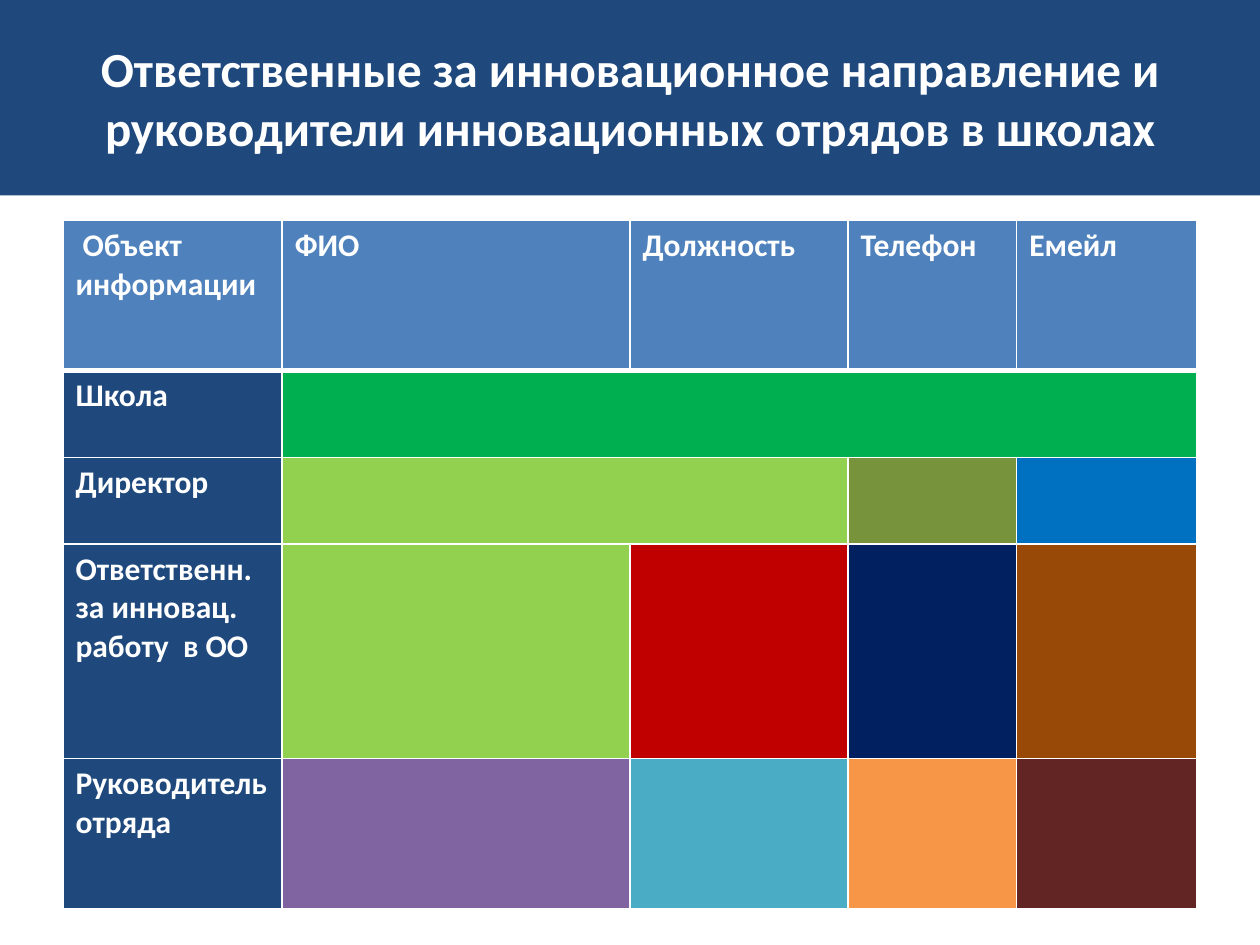
from pptx import Presentation
from pptx.dml.color import RGBColor
from pptx.enum.shapes import MSO_SHAPE as Shape
from pptx.enum.text import MSO_ANCHOR as Anchor, PP_ALIGN as Align
from pptx.oxml import parse_xml
from pptx.oxml.ns import nsdecls
from pptx.util import Inches, Pt

# Content
TITLE = ("Ответственные за инновационное направление и "
         "руководители инновационных отрядов в школах")
HEADERS = [" Объект информации", "ФИО", "Должность", "Телефон", "Емейл"]
# Row label, then cell fills; None continues the cell on its left
ROWS = [
    ("Школа", ["00B050", None, None, None]),
    ("Директор", ["92D050", None, "77933C", "0070C0"]),
    ("Ответственн.\nза инновац. работу  в ОО",
     ["92D050", "C00000", "002060", "984807"]),
    ("Руководитель отряда", ["8064A2", "4BACC6", "F79646", "632523"]),
]
COL_WIDTHS = [1.74, 2.76, 1.73, 1.34, 1.43]
ROW_HEIGHTS = [1.19, 0.69, 0.69, 1.7, 1.19]

THEME = dict(font="Calibri", title_size=28, cell_size=18, text="FFFFFF",
             dark="1F497D", header="4F81BD", border="FFFFFF")


def paint(fill, color):
    fill.solid()
    fill.fore_color.rgb = RGBColor.from_string(color)


def write(tf, text, size):
    tf.text = text
    for p in tf.paragraphs:
        for r in p.runs:
            r.font.name, r.font.size, r.font.bold = THEME["font"], Pt(size), True
            r.font.color.rgb = RGBColor.from_string(THEME["text"])


def set_borders(cell, top, bottom):
    tc_pr = cell._tc.get_or_add_tcPr()
    for side, width in zip("LRTB", (1, 1, top, bottom)):
        tc_pr.append(parse_xml(
            f'<a:ln{side} {nsdecls("a")} w="{Pt(width)}"><a:solidFill>'
            f'<a:srgbClr val="{THEME["border"]}"/></a:solidFill></a:ln{side}>'))


prs = Presentation()
prs.slide_width, prs.slide_height = Inches(10), Inches(7.5)
s = prs.slides.add_slide(prs.slide_layouts[6])

# Title band
band = s.shapes.add_shape(Shape.RECTANGLE, 0, 0, prs.slide_width, Inches(1.55))
band.shadow.inherit = False
band.line.fill.background()
paint(band.fill, THEME["dark"])
tf = band.text_frame
tf.word_wrap, tf.vertical_anchor = True, Anchor.MIDDLE
write(tf, TITLE, THEME["title_size"])
tf.paragraphs[0].alignment = Align.CENTER

# Table grid
table = s.shapes.add_table(
    len(ROW_HEIGHTS), len(COL_WIDTHS), Inches(0.5), Inches(1.75),
    Inches(sum(COL_WIDTHS)), Inches(sum(ROW_HEIGHTS))).table
for column, width in zip(table.columns, COL_WIDTHS):
    column.width = Inches(width)
for row, height in zip(table.rows, ROW_HEIGHTS):
    row.height = Inches(height)

# Cells: text and fill
grid = [[(text, THEME["header"]) for text in HEADERS]]
grid += [[(label, THEME["dark"])] + [("", color) for color in fills]
         for label, fills in ROWS]
for i, line in enumerate(grid):
    start = 0
    for j, (text, color) in enumerate(line):
        cell = table.cell(i, j)
        set_borders(cell, 3 if i == 1 else 1, 3 if i == 0 else 1)
        if color:
            start = j
        paint(cell.fill, color or line[start][1])
        if text:
            write(cell.text_frame, text, THEME["cell_size"])
        if color and j + 1 < len(line) and line[j + 1][1] is None:
            end = j + 1
            while end + 1 < len(line) and line[end + 1][1] is None:
                end += 1
            cell.merge(table.cell(i, end))

prs.save("out.pptx")
